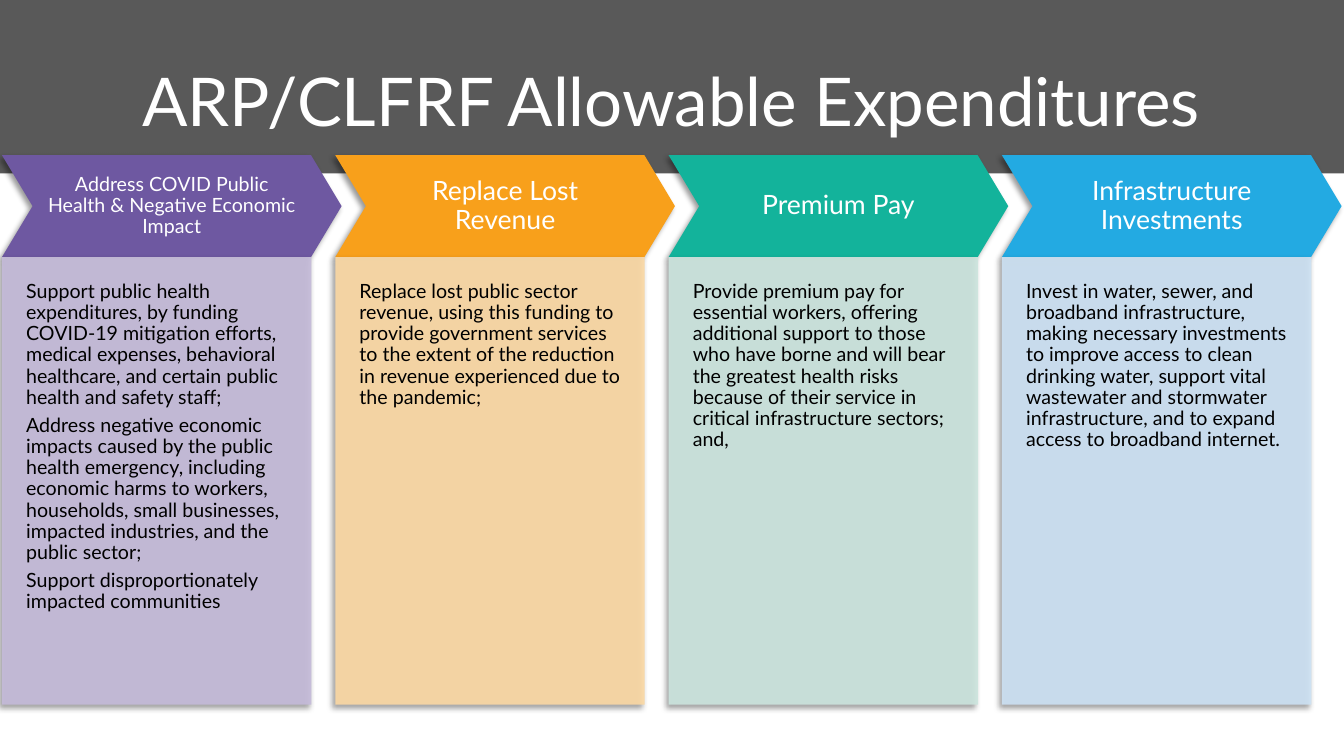
"""Build the slide on ARP/CLFRF allowable expenditures."""
from lxml.etree import SubElement
from pptx import Presentation
from pptx.dml.color import RGBColor
from pptx.enum.shapes import MSO_SHAPE as SHAPE
from pptx.enum.text import MSO_ANCHOR as ANCHOR, PP_ALIGN as ALIGN
from pptx.oxml.ns import qn
from pptx.util import Cm, Pt


def add_block(kind, box, color, alpha=100, shadow=True):
    sp = s.shapes.add_shape(kind, *map(Cm, box))
    sp.fill.solid()
    sp.fill.fore_color.rgb = RGBColor.from_string(color)
    sp.line.fill.background()
    sp.shadow.inherit = False
    if alpha < 100:
        clr = sp._element.spPr.find(f"{qn('a:solidFill')}/{qn('a:srgbClr')}")
        SubElement(clr, qn("a:alpha"), val=str(alpha * 1000))
    if shadow:
        effects = sp._element.spPr.find(qn("a:effectLst"))
        outer = SubElement(effects, qn("a:outerShdw"), blurRad=str(Pt(4)), dist=str(Pt(3)),
                           dir=str(135 * 60000), algn="tr", rotWithShape="0")
        clr = SubElement(outer, qn("a:srgbClr"), val="000000")
        SubElement(clr, qn("a:alpha"), val="40000")
    return sp


def add_text(box, paragraphs, size, color, margins, para_format, anchor=ANCHOR.MIDDLE):
    tf = s.shapes.add_textbox(*map(Cm, box)).text_frame
    tf.word_wrap = True
    tf.vertical_anchor = anchor
    for side, margin in zip(("left", "top", "right", "bottom"), margins):
        setattr(tf, f"margin_{side}", Cm(margin))
    for i, text in enumerate(paragraphs):
        p = tf.add_paragraph() if i else tf.paragraphs[0]
        for name, value in para_format.items():
            setattr(p, name, value)
        r = p.add_run()
        r.text = text
        for name, value in {"name": "Lato", "size": Pt(size)}.items():
            setattr(r.font, name, value)
        r.font.color.rgb = RGBColor.from_string(color)


COLUMNS = [
    ("Address COVID Public Health & Negative Economic Impact", 14, "6E58A1", "C5BBDA", [
        "Support public health expenditures, by funding COVID-19 mitigation efforts, medical "
        "expenses, behavioral healthcare, and certain public health and safety staff;",
        "Address negative economic impacts caused by the public health emergency, including "
        "economic harms to workers, households, small businesses, impacted industries, and the "
        "public sector;",
        "Support disproportionately impacted communities"]),
    ("Replace Lost Revenue", 19, "F8A01B", "FCD9A4", [
        "Replace lost public sector revenue, using this funding to provide government services "
        "to the extent of the reduction in revenue experienced due to the pandemic;"]),
    ("Premium Pay", 19, "13B39B", "CCE5DE", [
        "Provide premium pay for essential workers, offering additional support to those who "
        "have borne and will bear the greatest health risks because of their service in "
        "critical infrastructure sectors; and,"]),
    ("Infrastructure Investments", 19, "23AAE2", "CDE2F4", [
        "Invest in water, sewer, and broadband infrastructure, making necessary investments to "
        "improve access to clean drinking water, support vital wastewater and stormwater "
        "infrastructure, and to expand access to broadband internet."]),
]
LEFT, PITCH = 0.05, 8.4
HEAD_TOP, HEAD_W, HEAD_H = 3.91, 8.56, 2.57
BODY_W, BODY_H = 7.8, 11.28
NOTCH = 0.3 * HEAD_H
BODY_FORMAT = {"line_spacing": 0.9, "space_after": Pt(5)}
HEAD_FORMAT = {**BODY_FORMAT, "alignment": ALIGN.CENTER}

prs = Presentation()
prs.slide_width, prs.slide_height = Cm(33.87), Cm(19.05)
s = prs.slides.add_slide(prs.slide_layouts[6])

add_block(SHAPE.RECTANGLE, (0, 0, 33.87, 4.37), "595959", shadow=False)
add_text((1.78, 0.94, 30.28, 3.15), ["ARP/CLFRF Allowable Expenditures"], 48, "FFFFFF",
         (0, 0.18, 0, 0.18), {"alignment": ALIGN.CENTER})

for i, (heading, size, dark, light, paragraphs) in enumerate(COLUMNS):
    x = LEFT + i * PITCH
    chevron = add_block(SHAPE.CHEVRON, (x, HEAD_TOP, HEAD_W, HEAD_H), dark)
    chevron.adjustments[0] = 0.3
    add_text((x + NOTCH, HEAD_TOP, HEAD_W - 2 * NOTCH, HEAD_H), [heading], size, "FFFFFF",
             (0.33, 0.33, 0.33, 0.33), HEAD_FORMAT)
    body = (x, HEAD_TOP + HEAD_H, BODY_W, BODY_H)
    add_block(SHAPE.RECTANGLE, body, light, alpha=90)
    add_text(body, paragraphs, 14, "000000", (0.61, 0.61, 0.61, 1.24), BODY_FORMAT, ANCHOR.TOP)

prs.save("out.pptx")
